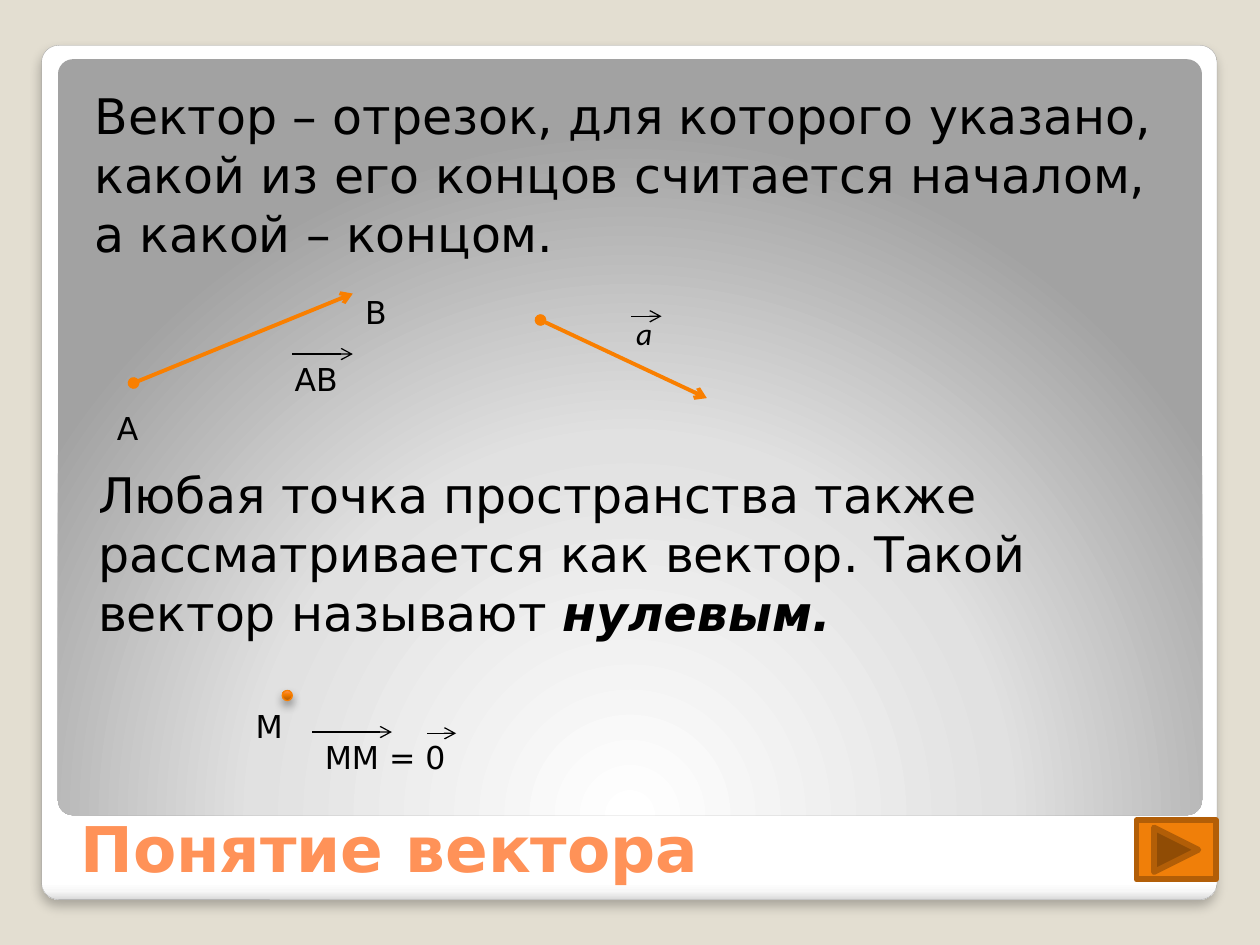
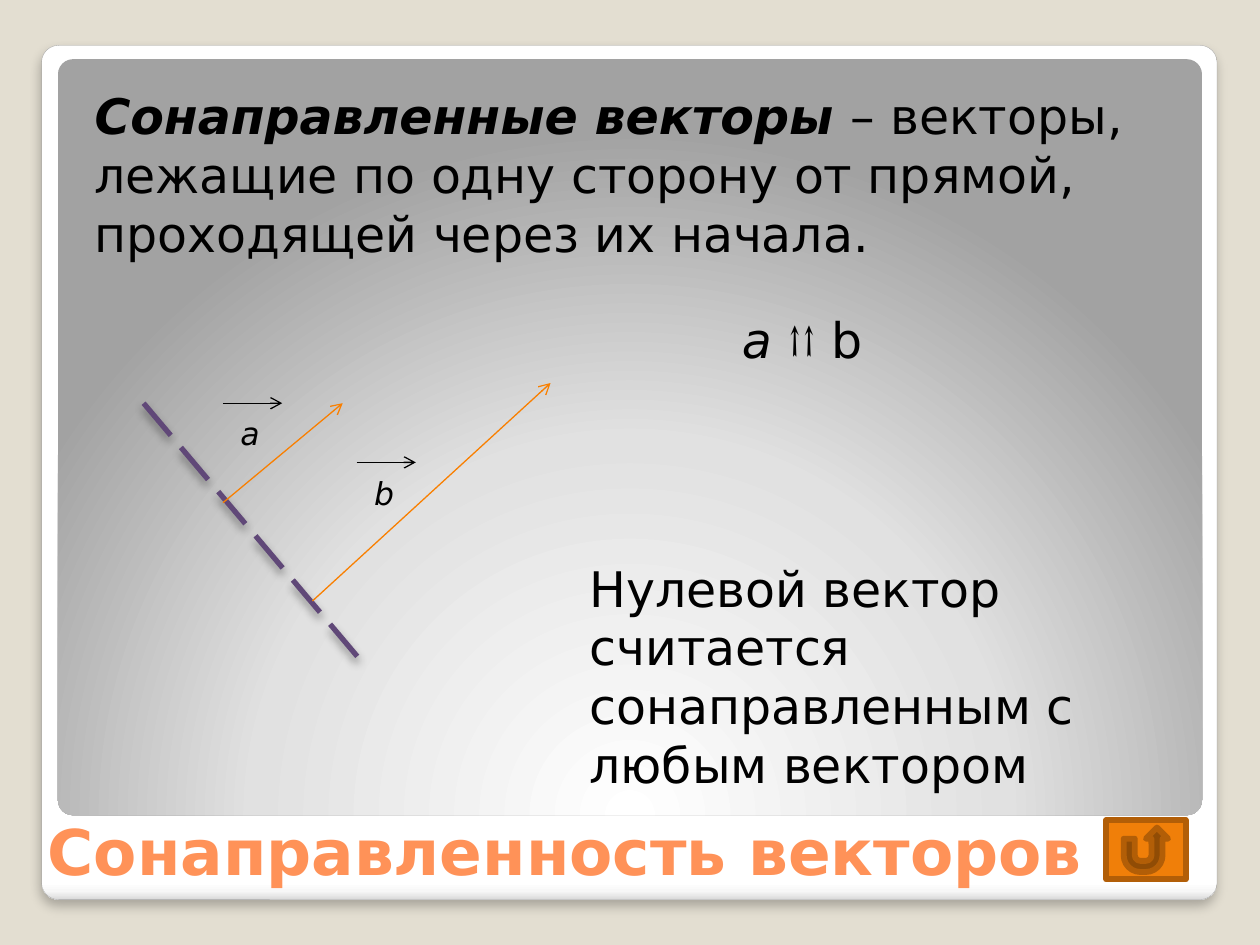
"""Build two slides about vectors and co-directed vectors."""
import lxml.etree
import pptx
import pptx.dml.color
import pptx.enum.dml
import pptx.enum.shapes
import pptx.enum.text
import pptx.oxml.ns
import pptx.util

Inches = pptx.util.Inches
Pt = pptx.util.Pt
SHAPES = pptx.enum.shapes.MSO_SHAPE

FONT = "DejaVu Sans"
BLACK = "000000"
ORANGE = "F97F00"
BACKDROP = "E3DED1"
TITLE = "FF9258"
PURPLE = "604878"
BUTTON = "F07F09"
BUTTON_EDGE = "B25E07"
FRAME_STOPS = [(0, "FFFFFF"), (98, "FFFFFF"), (99, "F7F7F7"), (100, "DADADA")]
PANEL_STOPS = [(0, "FFFFFF"), (55, "E1E1E1"), (100, "A2A2A2")]
POINT_STOPS = [(0, "B05A00"), (60, "F47C00"), (100, "FF945C")]
PANEL_FOCUS = {"l": 50, "t": 175, "r": 50, "b": -75}
SOFT_SHADOW = (25, 6, 4)
SHADOW = (40, 5.2, 3)


def rgb(color):
    """Turn a hex string into a colour."""
    return pptx.dml.color.RGBColor.from_string(color)


def add_xml(parent, tag, **attrs):
    """Append a DrawingML element with the given attributes."""
    values = {name: str(value) for name, value in attrs.items()}
    return lxml.etree.SubElement(parent, pptx.oxml.ns.qn("a:" + tag), values)


def set_line(line, color, width):
    """Give an outline its colour and width in points."""
    line.color.rgb = rgb(color)
    line.width = Pt(width)


def set_gradient(sp, stops, angle=0, focus=None):
    """Fill a shape with a linear gradient, or a circular one around a focus."""
    sp.fill.background()
    properties = sp._element.spPr
    grad = add_xml(properties, "gradFill", rotWithShape=1)
    gs_list = add_xml(grad, "gsLst")
    for position, color in stops:
        gs = add_xml(gs_list, "gs", pos=position * 1000)
        add_xml(gs, "srgbClr", val=color)
    if focus:
        circle = add_xml(grad, "path", path="circle")
        add_xml(circle, "fillToRect", **{side: value * 1000 for side, value in focus.items()})
    else:
        add_xml(grad, "lin", ang=angle * 60000, scaled=0)
    properties.replace(properties.find(pptx.oxml.ns.qn("a:noFill")), grad)


def set_effects(sp, shadow=None):
    """Replace the theme shadow by none, or by (opacity, blur, distance) downwards."""
    effects = add_xml(sp._element.spPr, "effectLst")
    if shadow:
        opacity, blur, distance = shadow
        outer = add_xml(effects, "outerShdw", blurRad=Pt(blur), dist=Pt(distance),
                        dir=90 * 60000, algn="t", rotWithShape=0)
        add_xml(add_xml(outer, "srgbClr", val=BLACK), "alpha", val=opacity * 1000)


def add_shape(slide, kind, box, line=None, shadow=None):
    """Add a preset shape with an optional (colour, width) outline and shadow."""
    sp = slide.shapes.add_shape(kind, *map(Inches, box))
    if line:
        set_line(sp.line, *line)
    else:
        sp.line.fill.background()
    set_effects(sp, shadow)
    return sp


def add_text(slide, box, *runs, size=18, color=BLACK, bottom=False, body=False):
    """Add a paragraph made of (text, style, font) runs; style holds b and i."""
    sp = slide.shapes.add_textbox(*map(Inches, box))
    tf = sp.text_frame
    tf.word_wrap = True
    if bottom:
        tf.vertical_anchor = pptx.enum.text.MSO_ANCHOR.BOTTOM
    p = tf.paragraphs[0]
    if body:
        tf.margin_left, tf.margin_top = Inches(0.2), Inches(0.1)
        p.space_before = Pt(2.5)
    for text, style, font in runs:
        r = p.add_run()
        r.text = text
        r.font.name = font
        r.font.size = Pt(size)
        r.font.bold = "b" in style
        r.font.italic = "i" in style
        r.font.color.rgb = rgb(color)


def add_label(slide, left, top, text, style="", font=FONT, width=0.39):
    """Add a short name beside a point or a vector."""
    add_text(slide, (left, top, width, 0.4), (text, style, font))


def add_line(slide, start, end, color=BLACK, width=0.75, head=None, tail="arrow",
             dash=None, shadow=None):
    """Draw a straight line, by default a thin arrow."""
    cx = slide.shapes.add_connector(pptx.enum.shapes.MSO_CONNECTOR.STRAIGHT,
                                    *map(Inches, (*start, *end)))
    set_line(cx.line, color, width)
    if dash:
        cx.line.dash_style = dash
    ln = cx.line._get_or_add_ln()
    for tag, kind in (("headEnd", head), ("tailEnd", tail)):
        if kind:
            add_xml(ln, tag, type=kind)
    set_effects(cx, shadow)


def add_overline(slide, left, top, length):
    """Draw the small arrow above a vector's name."""
    add_line(slide, (left, top), (left + length, top))


def add_button(slide, kind, left):
    """Add a navigation button at the foot of the slide."""
    sp = add_shape(slide, kind, (left, 6.51, 0.63, 0.47), (BUTTON_EDGE, 3.35))
    sp.fill.solid()
    sp.fill.fore_color.rgb = rgb(BUTTON)


def add_base(prs, title, title_box, *body):
    """Start a slide with its frame, panel, title and opening text."""
    slide = prs.slides.add_slide(prs.slide_layouts[6])
    slide.background.fill.solid()
    slide.background.fill.fore_color.rgb = rgb(BACKDROP)
    frame = add_shape(slide, SHAPES.ROUNDED_RECTANGLE, (0.33, 0.36, 9.33, 6.78),
                      ("A4A4A4", 0.16), SOFT_SHADOW)
    set_gradient(frame, FRAME_STOPS, angle=90)
    panel = add_shape(slide, SHAPES.ROUNDED_RECTANGLE, (0.46, 0.47, 9.08, 6))
    set_gradient(panel, PANEL_STOPS, focus=PANEL_FOCUS)
    for sp in (frame, panel):
        sp.adjustments[0] = 0.02
    add_text(slide, title_box, (title, "b", FONT), size=36, color=TITLE, bottom=True)
    add_text(slide, (0.55, 0.58, 8.95, 1.7), *body, size=28, body=True)
    return slide


def build_concept(prs):
    """Build the slide that defines a vector and the zero vector."""
    slide = add_base(
        prs, "Понятие вектора", (0.54, 6.19, 8.95, 0.88),
        ("Вектор – отрезок, для которого указано, какой из его концов "
         "считается началом, а какой – концом.", "", FONT))
    for start, end in (((1.06, 3.04), (2.8, 2.33)), ((4.29, 2.54), (5.61, 3.16))):
        add_line(slide, start, end, ORANGE, 2.25, head="oval")
    add_label(slide, 0.83, 3.2, "А")
    add_label(slide, 2.8, 2.28, "В")
    add_label(slide, 2.24, 2.81, "АВ", width=0.6)
    add_overline(slide, 2.32, 2.81, 0.48)
    add_label(slide, 4.95, 2.44, "a", "i", "Calibri")
    add_overline(slide, 5.01, 2.51, 0.24)

    add_text(slide, (0.68, 3.64, 8.66, 1.51),
             ("Любая точка пространства также рассматривается как вектор. "
              "Такой вектор называют ", "", FONT),
             ("нулевым.", "bi", FONT), size=28)
    point = add_shape(slide, SHAPES.OVAL, (2.24, 5.48, 0.08, 0.08), (ORANGE, 0.75), SHADOW)
    set_gradient(point, POINT_STOPS, angle=270)
    add_label(slide, 1.93, 5.56, "М")
    add_label(slide, 2.48, 5.81, "ММ = 0", width=2.6)
    add_overline(slide, 2.48, 5.81, 0.63)
    add_overline(slide, 3.39, 5.82, 0.23)
    add_button(slide, SHAPES.ACTION_BUTTON_FORWARD_OR_NEXT, 9.02)


def build_codirected(prs):
    """Build the slide about co-directed vectors."""
    slide = add_base(
        prs, "Сонаправленность векторов", (0.28, 5.95, 9.11, 1.15),
        ("Сонаправленные векторы ", "bi", FONT),
        ("– векторы, лежащие по одну сторону от прямой, "
         "проходящей через их начала.", "", FONT))
    add_line(slide, (1.14, 3.2), (2.87, 5.25), PURPLE, 3, tail=None,
             dash=pptx.enum.dml.MSO_LINE.LONG_DASH, shadow=SHADOW)
    for start, end in (((1.77, 3.99), (2.72, 3.2)), ((2.48, 4.77), (4.37, 3.04))):
        add_line(slide, start, end, ORANGE)
    for name, left, top in (("а", 1.77, 3.2), ("b", 2.83, 3.67)):
        add_overline(slide, left, top, 0.47)
        add_label(slide, left + 0.04, top + 0.04, name, "i")
    add_text(slide, (4.58, 4.38, 4.17, 1.99),
             ("Нулевой вектор считается сонаправленным с любым вектором", "", FONT), size=28)
    add_button(slide, SHAPES.ACTION_BUTTON_RETURN, 8.78)
    add_text(slide, (5.79, 2.41, 2.05, 0.57),
             ("a ", "i", FONT), ("↑↑", "", "Cambria"), (" b", "", FONT), size=28)


def main():
    """Build and save the presentation."""
    prs = pptx.Presentation()
    prs.slide_width, prs.slide_height = Inches(10), Inches(7.5)
    build_concept(prs)
    build_codirected(prs)
    prs.save("out.pptx")


if __name__ == "__main__":
    main()
